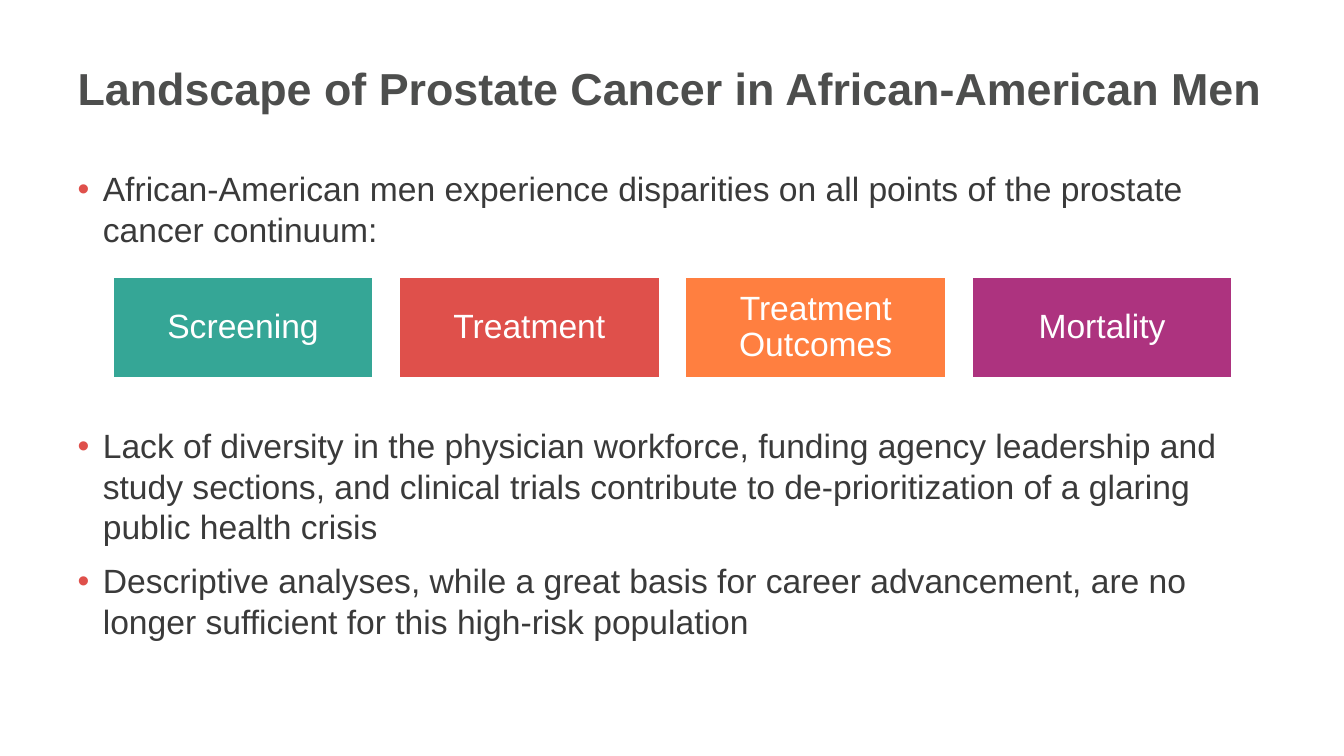
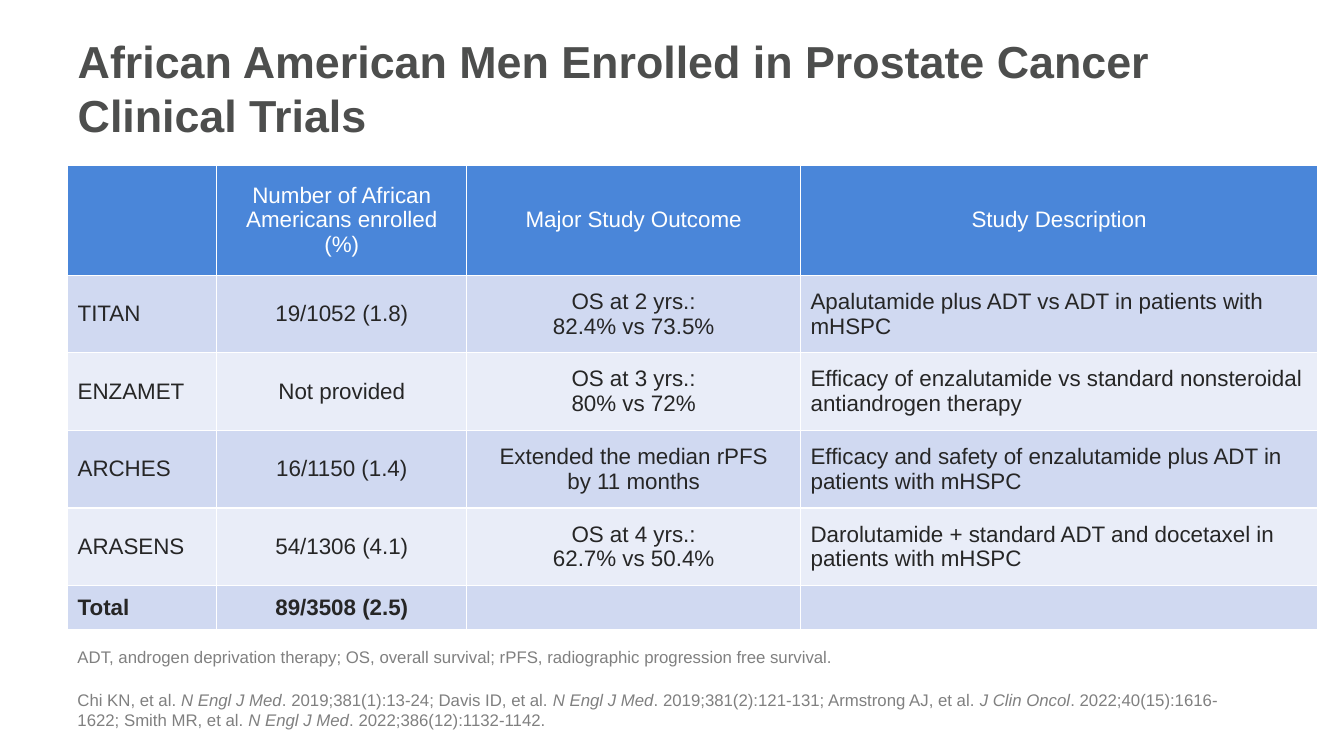
from dataclasses import dataclass

from lxml import etree
from pptx import Presentation
from pptx.dml.color import RGBColor
from pptx.enum import shapes, text
from pptx.oxml import ns
from pptx.util import Inches, Pt


@dataclass(frozen=True)
class Theme:
    font: str = "Arial"
    title: str = "4D4E4D"
    body: str = "3A3A3A"
    bullet: str = "DF504B"
    white: str = "FFFFFF"
    header: str = "4A86D9"
    bands: tuple = ("D0D9F1", "E9EDF8")
    cell: str = "262626"
    note: str = "808080"
    title_size: int = 32
    body_size: int = 24
    table_size: int = 16
    note_size: int = 12


theme = Theme()


def format_runs(text_frame, size, color, bold=False):
    for paragraph in text_frame.paragraphs:
        for run in paragraph.runs:
            run.font.name = theme.font
            run.font.size = Pt(size)
            run.font.bold = bold
            run.font.color.rgb = RGBColor.from_string(color)


def add_titled_slide(layout_index, title_text, title_width):
    slide = presentation.slides.add_slide(presentation.slide_layouts[layout_index])
    title = slide.shapes.title
    title.left, title.top = Inches(0.67), Inches(0.22)
    title.width, title.height = Inches(title_width), Inches(1.3)
    title.text_frame.text = title_text
    title.text_frame.auto_size = text.MSO_AUTO_SIZE.NONE
    title.text_frame.vertical_anchor = text.MSO_ANCHOR.MIDDLE
    title.text_frame.paragraphs[0].alignment = text.PP_ALIGN.LEFT
    format_runs(title.text_frame, theme.title_size, theme.title, True)
    return slide


presentation = Presentation()
presentation.slide_width = Inches(13.33)
presentation.slide_height = Inches(7.5)

slide = add_titled_slide(1, "Landscape of Prostate Cancer in African-American Men", 12.09)

body = slide.placeholders[1]
body.left, body.top = Inches(0.67), Inches(1.62)
body.width, body.height = Inches(11.75), Inches(5.16)
text_frame = body.text_frame
text_frame.auto_size = text.MSO_AUTO_SIZE.NONE
bullets = [
    ("African-American men experience disparities on all points of the prostate cancer continuum:", 0),
    ("Lack of diversity in the physician workforce, funding agency leadership and study sections, "
     "and clinical trials contribute to de-prioritization of a glaring public health crisis", 126),
    ("Descriptive analyses, while a great basis for career advancement, are no longer sufficient "
     "for this high-risk population", 10),
]
text_frame.text = "\n".join(bullet for bullet, gap in bullets)
for paragraph, (bullet, gap) in zip(text_frame.paragraphs, bullets):
    properties = paragraph._p.get_or_add_pPr()
    properties.set("marL", str(Inches(0.25)))
    properties.set("indent", str(-Inches(0.25)))
    bullet_color = etree.SubElement(properties, ns.qn("a:buClr"))
    etree.SubElement(bullet_color, ns.qn("a:srgbClr"), val=theme.bullet)
    etree.SubElement(properties, ns.qn("a:buChar"), char="•")
    paragraph.space_before = Pt(gap)
format_runs(text_frame, theme.body_size, theme.body)

continuum = [
    ("Screening", "35A696"),
    ("Treatment", "DF504B"),
    ("Treatment Outcomes", "FF7F40"),
    ("Mortality", "AD337F"),
]
for index, (stage, color) in enumerate(continuum):
    shape = slide.shapes.add_shape(
        shapes.MSO_SHAPE.RECTANGLE,
        Inches(1.12 + 2.84 * index), Inches(2.75), Inches(2.58), Inches(1),
    )
    shape.shadow.inherit = False
    shape.fill.solid()
    shape.fill.fore_color.rgb = RGBColor.from_string(color)
    shape.line.color.rgb = RGBColor.from_string(theme.white)
    shape.line.width = Pt(1)
    text_frame = shape.text_frame
    text_frame.text = stage
    text_frame.word_wrap = True
    text_frame.vertical_anchor = text.MSO_ANCHOR.MIDDLE
    paragraph = text_frame.paragraphs[0]
    paragraph.alignment = text.PP_ALIGN.CENTER
    paragraph.line_spacing = 0.9
    format_runs(text_frame, theme.body_size, theme.white)

slide = add_titled_slide(5, "African American Men Enrolled in Prostate Cancer Clinical Trials", 11.75)

trials = [
    ("", "Number of African Americans enrolled (%)", "Major Study Outcome", "Study Description"),
    ("TITAN", "19/1052 (1.8)", "OS at 2 yrs.:\n82.4% vs 73.5%",
     "Apalutamide plus ADT vs ADT in patients with mHSPC"),
    ("ENZAMET", "Not provided", "OS at 3 yrs.:\n80% vs 72%",
     "Efficacy of enzalutamide vs standard nonsteroidal antiandrogen therapy"),
    ("ARCHES", "16/1150 (1.4)", "Extended the median rPFS\nby 11 months",
     "Efficacy and safety of enzalutamide plus ADT in patients with mHSPC"),
    ("ARASENS", "54/1306 (4.1)", "OS at 4 yrs.:\n62.7% vs 50.4%",
     "Darolutamide + standard ADT and docetaxel in patients with mHSPC"),
    ("Total", "89/3508 (2.5)", "", ""),
]
column_widths = [1.48, 2.48, 3.31, 5.13]
row_heights = [1.09, 0.77, 0.77, 0.77, 0.77, 0.44]
table = slide.shapes.add_table(
    len(trials), len(column_widths),
    Inches(0.67), Inches(1.64), Inches(sum(column_widths)), Inches(sum(row_heights)),
).table
for column, width in zip(table.columns, column_widths):
    column.width = Inches(width)
for row, height in zip(table.rows, row_heights):
    row.height = Inches(height)

for row_index, trial in enumerate(trials):
    is_header = row_index == 0
    is_total = row_index == len(trials) - 1
    fill_color = theme.header if is_header else theme.bands[(row_index - 1) % 2]
    for column_index, value in enumerate(trial):
        cell = table.cell(row_index, column_index)
        properties = cell._tc.get_or_add_tcPr()
        for side in ("lnL", "lnR", "lnT", "lnB"):
            border = etree.SubElement(properties, ns.qn(f"a:{side}"), w=str(Pt(1)))
            border_fill = etree.SubElement(border, ns.qn("a:solidFill"))
            etree.SubElement(border_fill, ns.qn("a:srgbClr"), val=theme.white)
        cell.fill.solid()
        cell.fill.fore_color.rgb = RGBColor.from_string(fill_color)
        cell.vertical_anchor = text.MSO_ANCHOR.MIDDLE
        cell.text_frame.text = value
        is_centered = is_header or column_index in (1, 2)
        for paragraph in cell.text_frame.paragraphs:
            paragraph.alignment = text.PP_ALIGN.CENTER if is_centered else text.PP_ALIGN.LEFT
        text_color = theme.white if is_header else theme.cell
        format_runs(cell.text_frame, theme.table_size, text_color, is_total)

abbreviations = [
    "ADT, androgen deprivation therapy; OS, overall survival; rPFS, radiographic progression free survival.",
]
references = [
    "Chi KN, et al. ", "N Engl J Med",
    ". 2019;381(1):13-24; Davis ID, et al. ", "N Engl J Med",
    ". 2019;381(2):121-131; Armstrong AJ, et al. ", "J Clin Oncol",
    ". 2022;40(15):1616-1622; Smith MR, et al. ", "N Engl J Med",
    ". 2022;386(12):1132-1142.",
]
for pieces, top, width, height in [(abbreviations, 6.37, 10.21, 0.3), (references, 6.79, 11.9, 0.71)]:
    note = slide.shapes.add_textbox(Inches(0.67), Inches(top), Inches(width), Inches(height))
    note.text_frame.word_wrap = True
    paragraph = note.text_frame.paragraphs[0]
    for index, piece in enumerate(pieces):
        run = paragraph.add_run()
        run.text = piece
        run.font.italic = index % 2 == 1
    format_runs(note.text_frame, theme.note_size, theme.note)

presentation.save("out.pptx")
